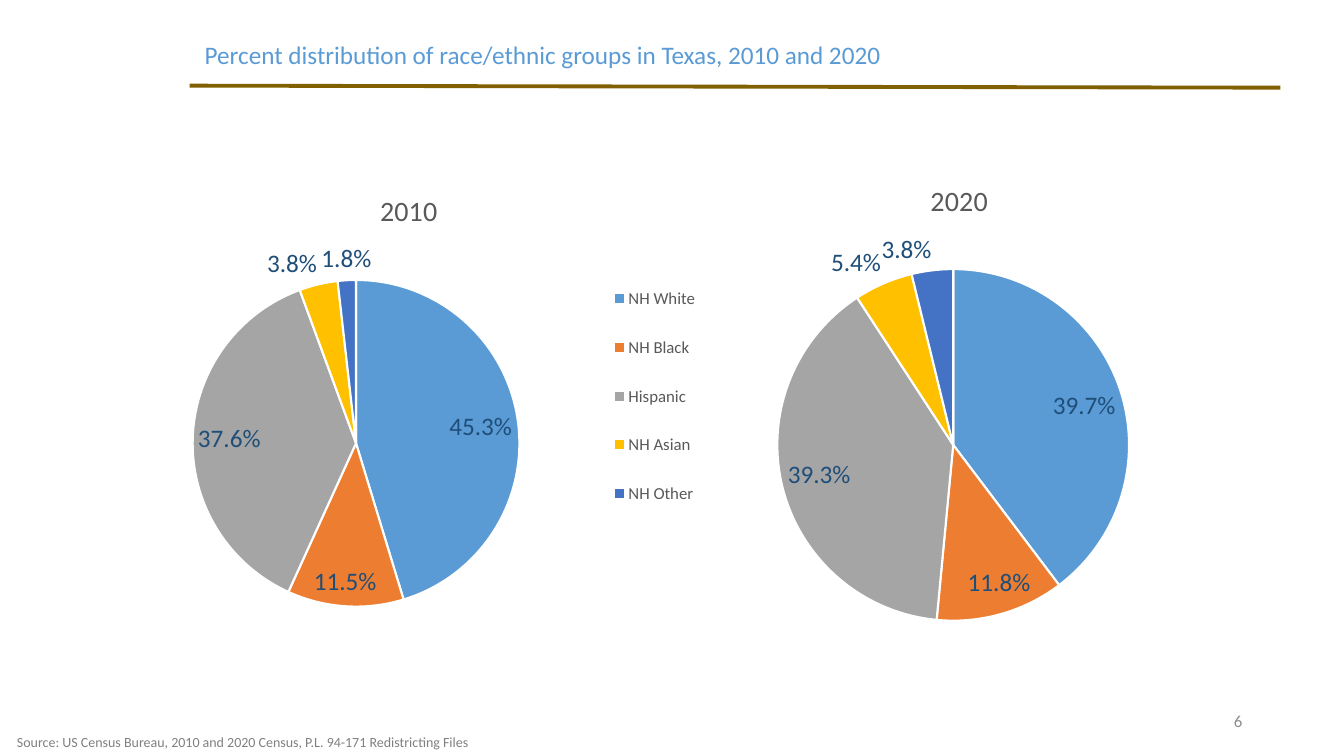
from lxml.etree import SubElement
from pptx import Presentation
from pptx.chart.data import CategoryChartData
from pptx.dml.color import RGBColor
from pptx.enum.chart import XL_CHART_TYPE, XL_LABEL_POSITION, XL_LEGEND_POSITION
from pptx.enum.shapes import MSO_CONNECTOR
from pptx.enum.text import MSO_ANCHOR, PP_ALIGN
from pptx.oxml import parse_xml
from pptx.oxml.ns import nsdecls, qn
from pptx.util import Inches, Pt

FONT = "Calibri"
WIDTH, HEIGHT = Inches(13.33), Inches(7.5)
COLORS = {
    "title": "5B9BD5", "rule": "806000", "number": "8C8C8C", "source": "808080",
    "chart_text": "595959", "label": "1F4E79", "border": "FFFFFF",
}
GROUPS = {
    "NH White": "5B9BD5", "NH Black": "ED7D31", "Hispanic": "A5A5A5",
    "NH Asian": "FFC000", "NH Other": "4472C4",
}


def place(left, top, width, height):
    """Turn percentages of the slide into a position and size."""
    return (int(WIDTH * left / 100), int(HEIGHT * top / 100),
            int(WIDTH * width / 100), int(HEIGHT * height / 100))


def style_font(font, size, color):
    """Apply the slide font with a size and a named color."""
    font.name, font.size, font.bold = FONT, Pt(size), False
    font.color.rgb = RGBColor.from_string(COLORS[color])


def write_text(shape, text, size, color, align=PP_ALIGN.LEFT, wrap=True):
    """Write one styled line, vertically centred, in a shape."""
    frame = shape.text_frame
    frame.word_wrap, frame.vertical_anchor = wrap, MSO_ANCHOR.MIDDLE
    paragraph = frame.paragraphs[0]
    paragraph.alignment = align
    run = paragraph.add_run()
    run.text = text
    style_font(run.font, size, color)


def add_title(slide, text, box):
    """Move the title placeholder and fill it."""
    title = slide.shapes.title
    title.left, title.top, title.width, title.height = box
    write_text(title, text, 18, "title")
    title.text_frame.paragraphs[0].line_spacing = 0.9


def add_rule(slide, left, top, width, drop):
    """Draw the rule below the title."""
    x, y, run, fall = place(left, top, width, drop)
    rule = slide.shapes.add_connector(MSO_CONNECTOR.STRAIGHT, x, y, x + run, y + fall)
    rule.line.width = Pt(2.75)
    rule.line.color.rgb = RGBColor.from_string(COLORS["rule"])
    SubElement(rule._element.spPr, qn("a:effectLst"))


def set_layout(element, x, y, width=None, height=None, inner=False):
    """Fix a chart part at shares of the chart area."""
    values = {"x": x, "y": y, "w": width, "h": height}
    target = '<c:layoutTarget val="inner"/>' if inner else ""
    modes = '<c:xMode val="edge"/><c:yMode val="edge"/>'
    sizes = "".join(f'<c:{name} val="{value}"/>' for name, value in values.items() if value is not None)
    layout = parse_xml(f'<c:layout {nsdecls("c")}><c:manualLayout>{target}{modes}{sizes}'
                       '</c:manualLayout></c:layout>')
    for old in element.findall(qn("c:layout")):
        element.remove(old)
    before = [child for child in element if child.tag in (qn("c:tx"), qn("c:legendPos"))]
    element.insert(element.index(before[-1]) + 1 if before else 0, layout)


def add_legend(chart, *layout):
    """Show the group names beside the pie."""
    chart.has_legend = True
    chart.legend.position = XL_LEGEND_POSITION.RIGHT
    chart.legend.include_in_layout = False
    style_font(chart.legend.font, 12, "chart_text")
    set_layout(chart.legend._element, *layout)


def add_pie(slide, year, shares, box, plot_layout):
    """Add one year's pie with its title and value labels."""
    data = CategoryChartData(number_format="0.0%")
    data.categories = list(GROUPS)
    data.add_series(year, shares)
    chart = slide.shapes.add_chart(XL_CHART_TYPE.PIE, *box, data).chart
    chart.has_legend = False
    style_font(chart.font, 10, "chart_text")
    chart.has_title = True
    run = chart.chart_title.text_frame.paragraphs[0].add_run()
    run.text = year
    style_font(run.font, 20, "chart_text")
    set_layout(chart.chart_title._element, 0.45, 0.05)
    plot = chart.plots[0]
    plot.vary_by_categories = True
    set_layout(chart._chartSpace.chart.plotArea, *plot_layout, inner=True)
    for index, color in enumerate(GROUPS.values()):
        slice_format = plot.series[0].points[index].format
        slice_format.fill.solid()
        slice_format.fill.fore_color.rgb = RGBColor.from_string(color)
        slice_format.line.width = Pt(1.5)
        slice_format.line.color.rgb = RGBColor.from_string(COLORS["border"])
    labels = plot.series[0].data_labels
    labels.show_value, labels.show_percentage = True, False
    labels.number_format, labels.number_format_is_linked = "0.0%", False
    labels.position = XL_LABEL_POSITION.BEST_FIT
    style_font(labels.font, 18, "label")
    return chart


def main():
    """Build and save the slide."""
    presentation = Presentation()
    presentation.slide_width, presentation.slide_height = WIDTH, HEIGHT
    slide = presentation.slides.add_slide(presentation.slide_layouts[5])
    add_title(slide, "Percent distribution of race/ethnic groups in Texas, 2010 and 2020",
              place(14.48, 4.93, 67.44, 4.93))
    add_rule(slide, 14.1, 11.33, 81.17, 0.27)
    first = add_pie(slide, "2010", (0.453, 0.115, 0.376, 0.038, 0.018),
                    place(6.83, 21.33, 46.81, 65.47), (0.16, 0.24, 0.52, 0.66))
    add_legend(first, 0.82, 0.2, 0.15, 0.55)
    add_pie(slide, "2020", (0.397, 0.118, 0.393, 0.054, 0.038),
            place(48.16, 19.87, 45.99, 68.4), (0.21, 0.23, 0.57, 0.68))
    number = slide.shapes.add_textbox(*place(70.67, 92.67, 22.5, 5.33))
    write_text(number, "6", 12, "number", PP_ALIGN.RIGHT)
    source = slide.shapes.add_textbox(*place(0.53, 96.4, 35.78, 3.6))
    write_text(source, "Source: US Census Bureau, 2010 and 2020 Census, P.L. 94-171 Redistricting Files",
               10, "source", wrap=False)
    presentation.save("out.pptx")


if __name__ == "__main__":
    main()
